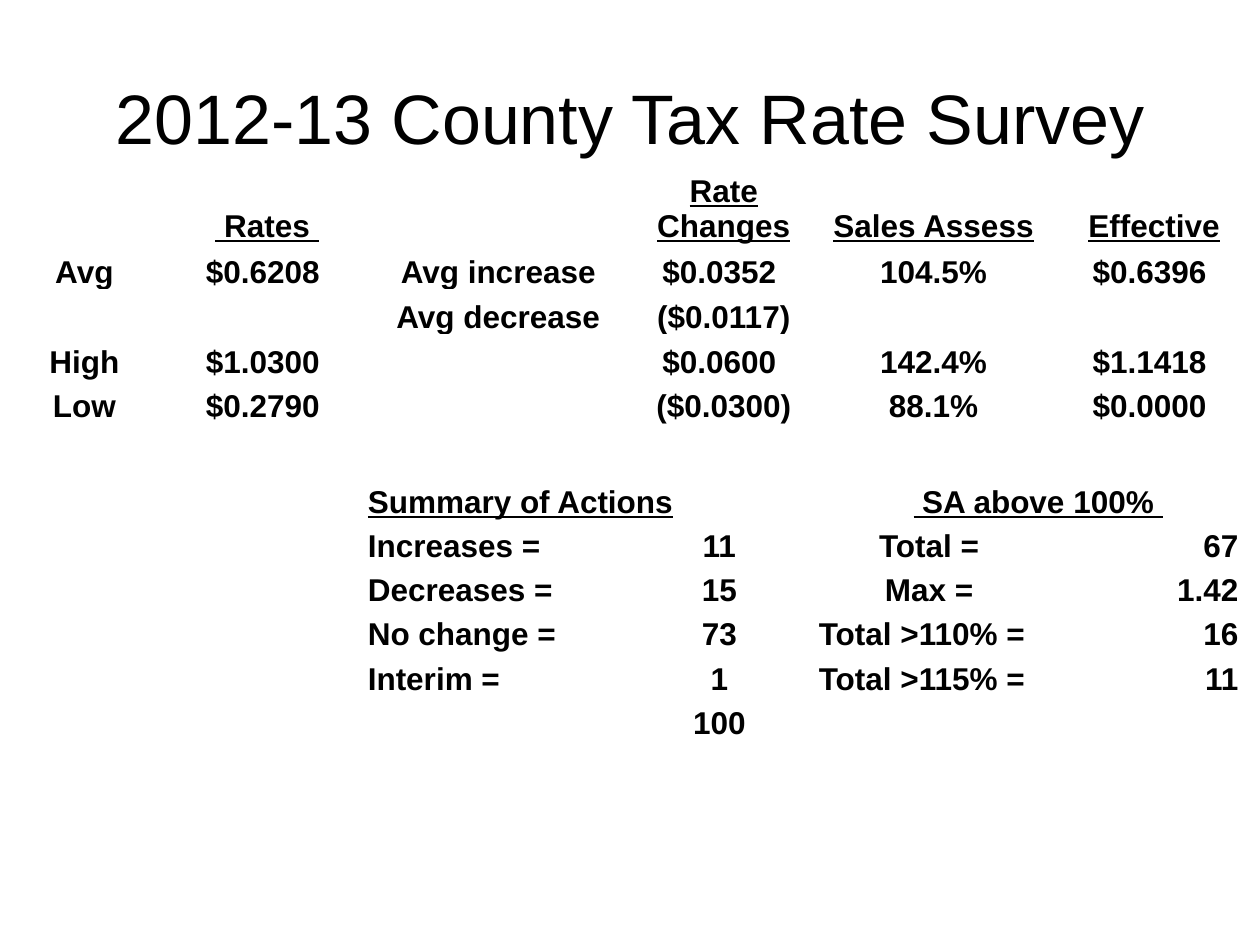
from pptx import Presentation, util as u
from pptx.dml.color import RGBColor
from pptx.enum import text

TITLE = "2012-13 County Tax Rate Survey"
ROWS = [
    ["", " Rates ", "", "Rate Changes", "Sales Assess", "Effective"],
    ["Avg", "$0.6208 ", "Avg increase", "$0.0352 ", "104.5%", "$0.6396 "],
    ["", "", "Avg decrease", "($0.0117)", "", ""],
    ["High", "$1.0300 ", "", "$0.0600 ", "142.4%", "$1.1418 "],
    ["Low", "$0.2790 ", "", "($0.0300)", "88.1%", "$0.0000 "],
    [""] * 6,
    ["", "", "Summary of Actions", "", " SA above 100% ", ""],
    ["", "", "Increases =", "11 ", "Total = ", "67"],
    ["", "", "Decreases =", "15 ", "Max = ", "1.42"],
    ["", "", "No change =", "73 ", "Total >110% =", "16"],
    ["", "", "Interim =", "1 ", "Total >115% =", "11"],
    ["", "", "", "100 ", "", ""],
]
COLS = [1.32, 1.58, 2.09, 1.49, 1.84, 1.66]
HEIGHTS = [0.41] + [0.36] * 3 + [0.35] * 2 + [0.41] + [0.35] * 5
SUMMARY = 6
HEADERS = (0, SUMMARY)
FONT, INK = "Arial", "000000"
ALIGN = text.PP_ALIGN


def style(p, size, align, bold=False, underline=False):
    p.alignment = align
    for f in [p.font] + [r.font for r in p.runs]:
        f.name, f.size, f.bold, f.underline = FONT, u.Pt(size), bold, underline
        f.color.rgb = RGBColor.from_string(INK)


def alignment(row, col):
    if row >= SUMMARY and col == 2 or ROWS[row][col].startswith("Total >"):
        return ALIGN.LEFT
    return ALIGN.RIGHT if row > SUMMARY and col == 5 else ALIGN.CENTER


prs = Presentation()
prs.slide_width, prs.slide_height = u.Inches(10), u.Inches(7.5)
s = prs.slides.add_slide(prs.slide_layouts[6])

sp = s.shapes.add_textbox(*map(u.Inches, (0.5, 0.3, 9, 1.25)))
tf = sp.text_frame
tf.word_wrap = True
tf.vertical_anchor = text.MSO_ANCHOR.MIDDLE
tf.text = TITLE
style(tf.paragraphs[0], 40, ALIGN.CENTER)

box = map(u.Inches, (0.01, 1.33, sum(COLS), sum(HEIGHTS)))
table = s.shapes.add_table(len(ROWS), len(COLS), *box).table
table.first_row = table.horz_banding = False
for column, width in zip(table.columns, COLS):
    column.width = u.Inches(width)
for row, height in zip(table.rows, HEIGHTS):
    row.height = u.Inches(height)
for col in (2, 4):
    table.cell(SUMMARY, col).merge(table.cell(SUMMARY, col + 1))

for i, values in enumerate(ROWS):
    for j, value in enumerate(values):
        cell, align = table.cell(i, j), alignment(i, j)
        cell.fill.background()
        cell.vertical_anchor = text.MSO_ANCHOR.BOTTOM
        cell.margin_left = cell.margin_top = u.Inches(0.01)
        cell.margin_right = u.Inches(0.16 if align == ALIGN.RIGHT else 0.01)
        cell.margin_bottom = 0
        p = cell.text_frame.paragraphs[0]
        p.text = value
        style(p, 18, align, True, i in HEADERS)

prs.save("out.pptx")
